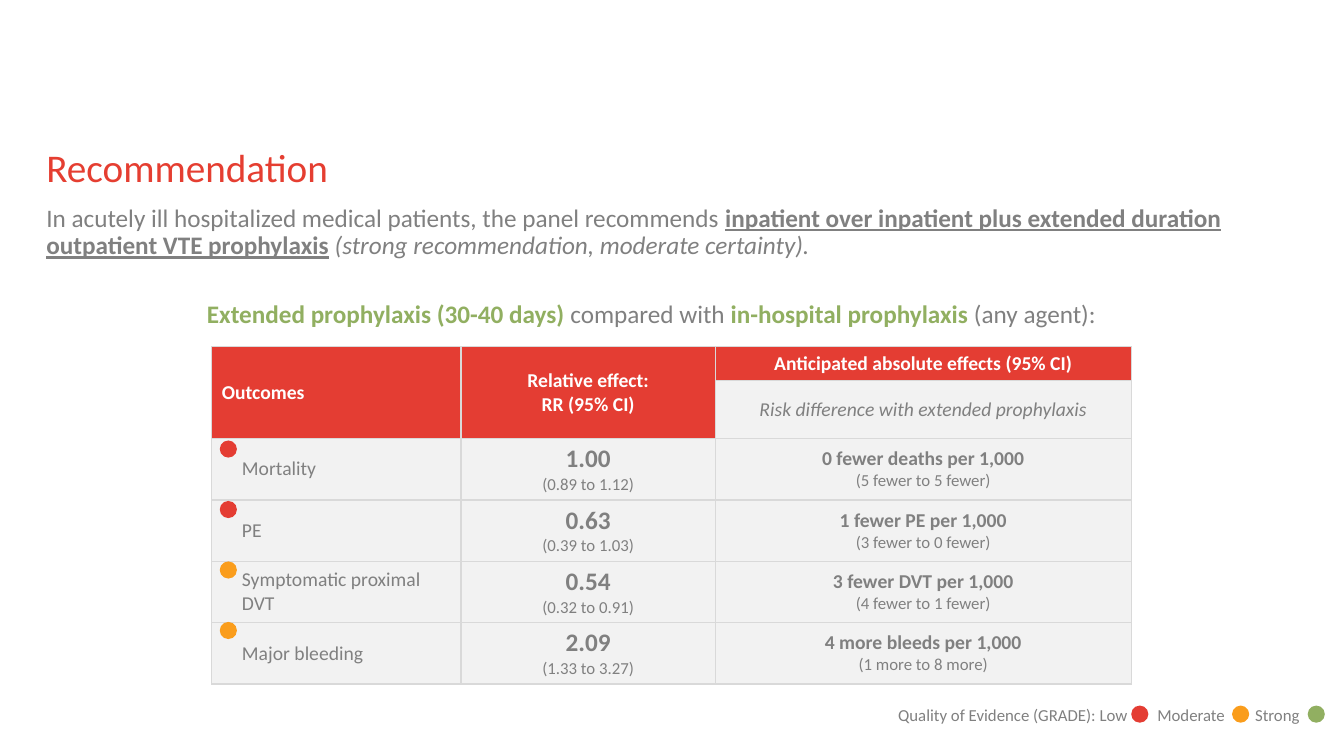
from collections import namedtuple

from lxml import etree
from pptx import Presentation
from pptx import util as u
from pptx.dml.color import RGBColor
from pptx.enum import shapes, text
from pptx.oxml import ns

Box = namedtuple("Box", "left top width height")

SLIDE = Box(0, 0, 13.33, 7.5)
MARGIN = 0.46
TITLE = Box(MARGIN, 1.47, 12, 0.46)
BODY = Box(MARGIN, 2.04, 12, 1.05)
EVIDENCE = Box(2.1, 3.44, 9.12, 2.89)
LEGEND = Box(8.81, 6.94, 4.53, 0.3)

RED, ORANGE, GREEN = "E43D33", "FA9D1C", "91AF61"
GRAY, PALE, RULE, WHITE = "808080", "F2F2F2", "D9D9D9", "FFFFFF"
DOT = 0.17
DOT_PITCH = 0.6
COLUMN_WEIGHTS = (2.47, 2.52, 4.12)
ROW_WEIGHTS = (0.31, 0.38, 0.55, 0.55, 0.55, 0.55)

OUTCOMES = [
    ("Mortality", RED, "1.00", "(0.89 to 1.12)", "0 fewer deaths per 1,000", "(5 fewer to 5 fewer)"),
    ("PE", RED, "0.63", "(0.39 to 1.03)", "1 fewer PE per 1,000", "(3 fewer to 0 fewer)"),
    ("Symptomatic proximal DVT", ORANGE, "0.54", "(0.32 to 0.91)", "3 fewer DVT per 1,000", "(4 fewer to 1 fewer)"),
    ("Major bleeding", ORANGE, "2.09", "(1.33 to 3.27)", "4 more bleeds per 1,000", "(1 more to 8 more)"),
]


def color(hex_string):
    return RGBColor.from_string(hex_string)


def inches(box):
    return [u.Inches(length) for length in box]


def write(paragraph, words, size=14, fill=GRAY, bold=False, italic=False, underline=False):
    run = paragraph.add_run()
    run.text = words
    font = run.font
    font.name, font.size = "Calibri", u.Pt(size)
    font.bold, font.italic, font.underline = bold, italic, underline
    font.color.rgb = color(fill)


def add_dot(slide, left, top, fill):
    dot = slide.shapes.add_shape(shapes.MSO_SHAPE.OVAL, *inches((left, top, DOT, DOT)))
    dot.shadow.inherit = False
    dot.fill.solid()
    dot.fill.fore_color.rgb = color(fill)
    dot.line.fill.background()


def fit_placeholder(holder, box):
    """Move a placeholder to the box and give it a plain, unpadded text frame."""
    holder.left, holder.top, holder.width, holder.height = inches(box)
    frame = holder.text_frame
    frame.margin_left = frame.margin_top = frame.margin_right = frame.margin_bottom = 0
    frame.auto_size = text.MSO_AUTO_SIZE.NONE
    frame.vertical_anchor = text.MSO_ANCHOR.TOP
    frame.word_wrap = True
    return frame


def format_paragraph(paragraph, align=text.PP_ALIGN.LEFT, before=0):
    properties = paragraph._p.get_or_add_pPr()
    properties.set("marL", "0")
    properties.set("indent", "0")
    etree.SubElement(properties, ns.qn("a:buNone"))
    paragraph.alignment = align
    paragraph.line_spacing = 0.9
    paragraph.space_before = u.Pt(before)


def add_title(slide, box):
    paragraph = fit_placeholder(slide.shapes.title, box).paragraphs[0]
    format_paragraph(paragraph)
    write(paragraph, "Recommendation", size=28, fill="E53E31")


def add_recommendation(slide, box):
    frame = fit_placeholder(slide.placeholders[1], box)
    advice, comparison = frame.paragraphs[0], frame.add_paragraph()
    format_paragraph(advice)
    write(advice, "In acutely ill hospitalized medical patients, the panel recommends ", size=18)
    write(advice, "inpatient over inpatient plus extended duration outpatient VTE prophylaxis",
          size=18, bold=True, underline=True)
    write(advice, " ", size=18)
    write(advice, "(strong recommendation, moderate certainty).", size=18, italic=True)

    format_paragraph(comparison, text.PP_ALIGN.CENTER, before=30)
    write(comparison, "Extended prophylaxis (30-40 days) ", size=18, fill=GREEN, bold=True)
    write(comparison, "compared with ", size=18)
    write(comparison, "in-hospital prophylaxis ", size=18, fill=GREEN, bold=True)
    write(comparison, "(any agent):", size=18)


def style_cell(cell, fill):
    properties = cell._tc.get_or_add_tcPr()
    for side in ("lnL", "lnR", "lnT", "lnB"):
        line = etree.SubElement(properties, ns.qn(f"a:{side}"), w=str(u.Pt(1)))
        solid = etree.SubElement(line, ns.qn("a:solidFill"))
        etree.SubElement(solid, ns.qn("a:srgbClr"), val=RULE)
    cell.fill.solid()
    cell.fill.fore_color.rgb = color(fill)
    cell.vertical_anchor = text.MSO_ANCHOR.MIDDLE


def fill_cell(cell, *lines, align=text.PP_ALIGN.CENTER):
    """Write one paragraph for each (words, format) pair."""
    for index, (words, style) in enumerate(lines):
        frame = cell.text_frame
        paragraph = frame.add_paragraph() if index else frame.paragraphs[0]
        paragraph.alignment = align
        write(paragraph, words, **style)


def add_evidence_table(slide, box):
    table = slide.shapes.add_table(len(ROW_WEIGHTS), len(COLUMN_WEIGHTS), *inches(box)).table
    table.first_row = table.horz_banding = False
    for column, weight in zip(table.columns, COLUMN_WEIGHTS):
        column.width = u.Inches(box.width * weight / sum(COLUMN_WEIGHTS))
    for row, weight in zip(table.rows, ROW_WEIGHTS):
        row.height = u.Inches(box.height * weight / sum(ROW_WEIGHTS))
    for row in range(len(ROW_WEIGHTS)):
        for column in range(len(COLUMN_WEIGHTS)):
            is_header = row == 0 or (row == 1 and column < 2)
            style_cell(table.cell(row, column), RED if is_header else PALE)
    for column in (0, 1):
        table.cell(0, column).merge(table.cell(1, column))

    header = {"fill": WHITE, "bold": True}
    fill_cell(table.cell(0, 0), ("Outcomes", header), align=text.PP_ALIGN.LEFT)
    fill_cell(table.cell(0, 1), ("Relative effect:", header), ("RR (95% CI)", header))
    fill_cell(table.cell(0, 2), ("Anticipated absolute effects (95% CI)", header))
    fill_cell(table.cell(1, 2), ("Risk difference with extended prophylaxis", {"italic": True}))

    interval = {"size": 12}
    for index, (outcome, certainty, ratio, ratio_ci, effect, effect_ci) in enumerate(OUTCOMES):
        name, relative, absolute = table.rows[index + 2].cells
        name.margin_left = u.Inches(0.3)
        fill_cell(name, (outcome, {}), align=text.PP_ALIGN.LEFT)
        fill_cell(relative, (ratio, {"size": 18, "bold": True}), (ratio_ci, interval))
        fill_cell(absolute, (effect, {"bold": True}), (effect_ci, interval))
        add_dot(slide, box.left + 0.08, box.top + 0.93 + index * DOT_PITCH, certainty)


def add_legend(slide, box):
    frame = slide.shapes.add_textbox(*inches(box)).text_frame
    frame.word_wrap = True
    paragraph = frame.paragraphs[0]
    tabs = etree.SubElement(paragraph._p.get_or_add_pPr(), ns.qn("a:tabLst"))
    for stop in (2.57, 3.54):
        etree.SubElement(tabs, ns.qn("a:tab"), pos=str(u.Inches(stop)), algn="l")
    write(paragraph, "Quality of Evidence (GRADE): Low\tModerate\tStrong", size=12)
    for offset, grade in ((2.41, RED), (3.41, ORANGE), (4.16, GREEN)):
        add_dot(slide, box.left + offset, box.top + 0.06, grade)


def main():
    deck = Presentation()
    deck.slide_width, deck.slide_height = u.Inches(SLIDE.width), u.Inches(SLIDE.height)
    slide = deck.slides.add_slide(deck.slide_layouts[1])
    add_title(slide, TITLE)
    add_recommendation(slide, BODY)
    add_evidence_table(slide, EVIDENCE)
    add_legend(slide, LEGEND)
    deck.save("out.pptx")


if __name__ == "__main__":
    main()
